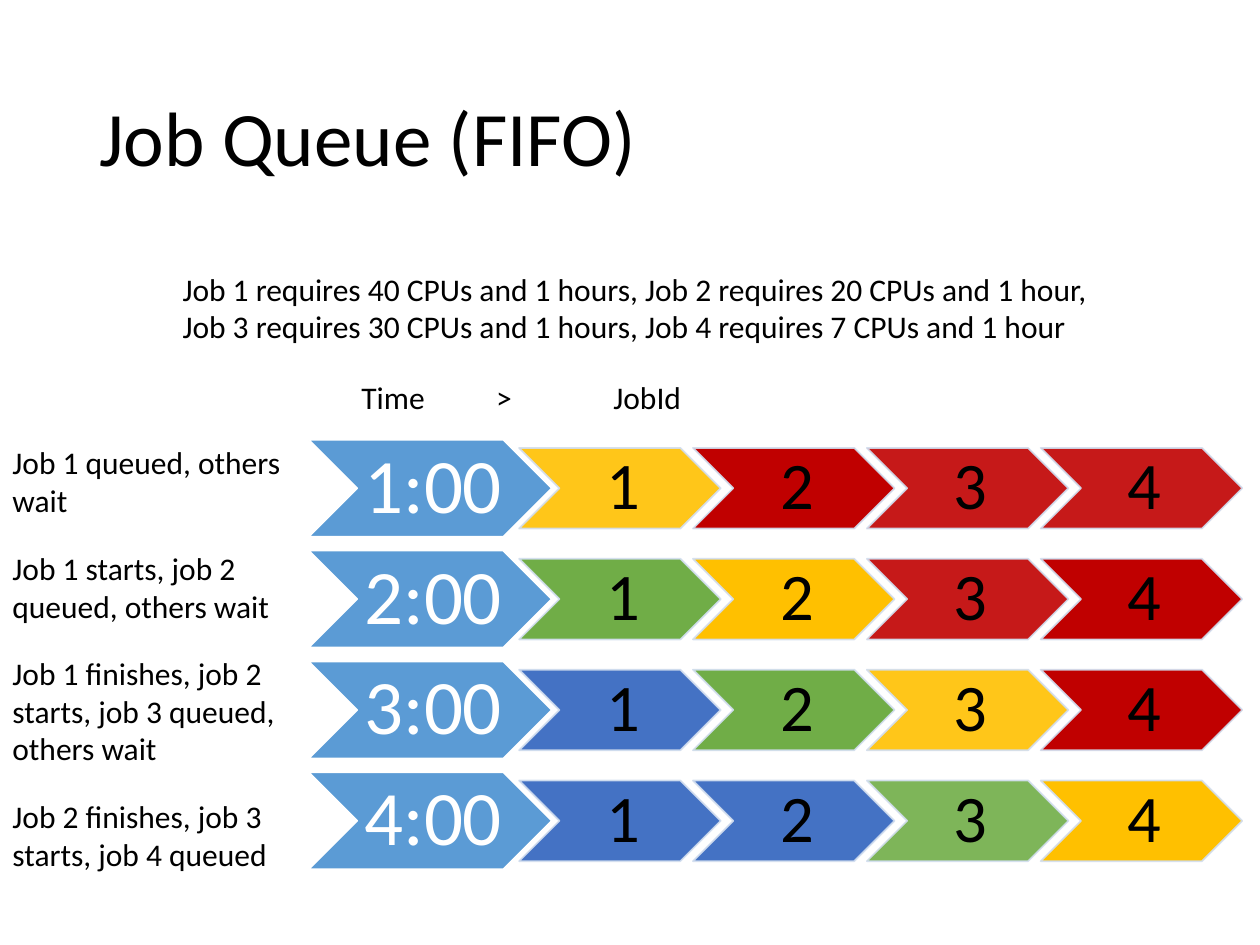
from typing import NamedTuple

from lxml import etree
from pptx import Presentation
from pptx.dml.color import RGBColor
from pptx.enum.shapes import MSO_SHAPE
from pptx.enum.text import MSO_ANCHOR, PP_ALIGN
from pptx.oxml.ns import qn
from pptx.util import Inches, Pt

CHEVRON = MSO_SHAPE.CHEVRON
MIDDLE = MSO_ANCHOR.MIDDLE
TOP = MSO_ANCHOR.TOP
CENTER = PP_ALIGN.CENTER

FONT = "Calibri"
BLACK = RGBColor(0x00, 0x00, 0x00)
WHITE = RGBColor(0xFF, 0xFF, 0xFF)
CLOCK = RGBColor(0x5B, 0x9B, 0xD5)
EDGE = RGBColor(0xD2, 0xDE, 0xEF)
WAITING = RGBColor(0xC0, 0x00, 0x00)
QUEUED = RGBColor(0xFF, 0xC0, 0x00)
RUNNING = RGBColor(0x70, 0xAD, 0x47)
FINISHED = RGBColor(0x44, 0x72, 0xC4)

FIRST_ROW_TOP, ROW_STEP = 3.49, 0.88
FIRST_JOB_LEFT, JOB_STEP = 4.12, 1.38
CLOCK_HEIGHT, JOB_HEIGHT = 0.77, 0.64


class Box(NamedTuple):
    left: float
    top: float
    width: float
    height: float


class Job(NamedTuple):
    status: RGBColor
    opacity: int = 100


class Hour(NamedTuple):
    time: str
    note: str
    note_top: float
    note_height: float
    jobs: tuple[Job, ...]


class Style(NamedTuple):
    size: int
    color: RGBColor
    edge: RGBColor
    edge_opacity: int


CLOCK_STYLE = Style(44, WHITE, WHITE, 100)
JOB_STYLE = Style(38, BLACK, EDGE, 90)

HOURS = (
    Hour("1:00", "Job 1 queued, others wait", 3.47, 0.71,
         (Job(QUEUED, 90), Job(WAITING), Job(WAITING, 90), Job(WAITING, 90))),
    Hour("2:00", "Job 1 starts, job 2 queued, others wait", 4.31, 0.71,
         (Job(RUNNING), Job(QUEUED), Job(WAITING, 90), Job(WAITING))),
    Hour("3:00", "Job 1 finishes, job 2 starts, job 3 queued, others wait", 5.14, 1.01,
         (Job(FINISHED), Job(RUNNING), Job(QUEUED, 90), Job(WAITING))),
    Hour("4:00", "Job 2 finishes, job 3 starts, job 4 queued", 6.28, 0.71,
         (Job(FINISHED), Job(FINISHED), Job(RUNNING, 90), Job(QUEUED))),
)

REQUIREMENTS = (
    "Job 1 requires 40 CPUs and 1 hours, Job 2 requires 20 CPUs and 1 hour,",
    "Job 3 requires 30 CPUs and 1 hours, Job 4 requires 7 CPUs and 1 hour",
)


def add_run(paragraph, text: str, size: int, color: RGBColor) -> None:
    run = paragraph.add_run()
    run.text = text
    run.font.name = FONT
    run.font.size = Pt(size)
    run.font.color.rgb = color


def add_label(slide, box: Box, lines: tuple[str, ...], size: int = 18,
              anchor=TOP, wrap: bool = True):
    label = slide.shapes.add_textbox(*map(Inches, box))
    frame = label.text_frame
    frame.word_wrap = wrap
    frame.vertical_anchor = anchor
    for index, line in enumerate(lines):
        paragraph = frame.add_paragraph() if index else frame.paragraphs[0]
        add_run(paragraph, line, size, BLACK)
    return frame


def set_tabs(paragraph, positions: tuple[float, ...]) -> None:
    stops = etree.SubElement(paragraph._p.get_or_add_pPr(), qn("a:tabLst"))
    for position in positions:
        etree.SubElement(stops, qn("a:tab"), pos=str(Inches(position)), algn="l")


def set_opacity(color_parent, percent: int) -> None:
    if percent < 100:
        color = color_parent.find(f"{qn('a:solidFill')}/{qn('a:srgbClr')}")
        etree.SubElement(color, qn("a:alpha"), val=str(percent * 1000))


def add_chevron(slide, box: Box, text: str, job: Job, style: Style) -> None:
    chevron = slide.shapes.add_shape(CHEVRON, *map(Inches, box))
    chevron.shadow.inherit = False
    chevron.fill.solid()
    chevron.fill.fore_color.rgb = job.status
    chevron.line.color.rgb = style.edge
    chevron.line.width = Pt(1)
    properties = chevron._element.spPr
    set_opacity(properties, job.opacity)
    set_opacity(properties.find(qn("a:ln")), style.edge_opacity)

    frame = chevron.text_frame
    frame.word_wrap = True
    frame.vertical_anchor = MIDDLE
    frame.margin_left = Inches(0.05)
    frame.margin_right = 0
    frame.margin_top = frame.margin_bottom = Inches(0.03)
    paragraph = frame.paragraphs[0]
    paragraph.alignment = CENTER
    paragraph.line_spacing = 0.9
    add_run(paragraph, text, style.size, style.color)


def add_hour(slide, row: int, hour: Hour) -> None:
    top = FIRST_ROW_TOP + row * ROW_STEP
    add_label(slide, Box(0, hour.note_top, 2.61, hour.note_height), (hour.note,))
    add_chevron(slide, Box(2.45, top, 1.93, CLOCK_HEIGHT), hour.time, Job(CLOCK), CLOCK_STYLE)
    job_top = top + (CLOCK_HEIGHT - JOB_HEIGHT) / 2
    for column, job in enumerate(hour.jobs):
        left = FIRST_JOB_LEFT + column * JOB_STEP
        add_chevron(slide, Box(left, job_top, 1.6, JOB_HEIGHT), str(column + 1), job, JOB_STYLE)


def main() -> None:
    presentation = Presentation()
    presentation.slide_width = Inches(10)
    presentation.slide_height = Inches(7.5)
    slide = presentation.slides.add_slide(presentation.slide_layouts[6])

    title = add_label(slide, Box(0.69, 0.4, 7.41, 1.45), ("Job Queue (FIFO)",), 44, MIDDLE)
    title.paragraphs[0].line_spacing = 0.9
    for row, hour in enumerate(HOURS):
        add_hour(slide, row, hour)
    headings = add_label(slide, Box(2.77, 2.95, 2.84, 0.4), ("Time\t>\tJobId",))
    set_tabs(headings.paragraphs[0], (1.07, 2))
    add_label(slide, Box(1.35, 2.09, 7.41, 0.71), REQUIREMENTS, wrap=False)

    presentation.save("out.pptx")


if __name__ == "__main__":
    main()
